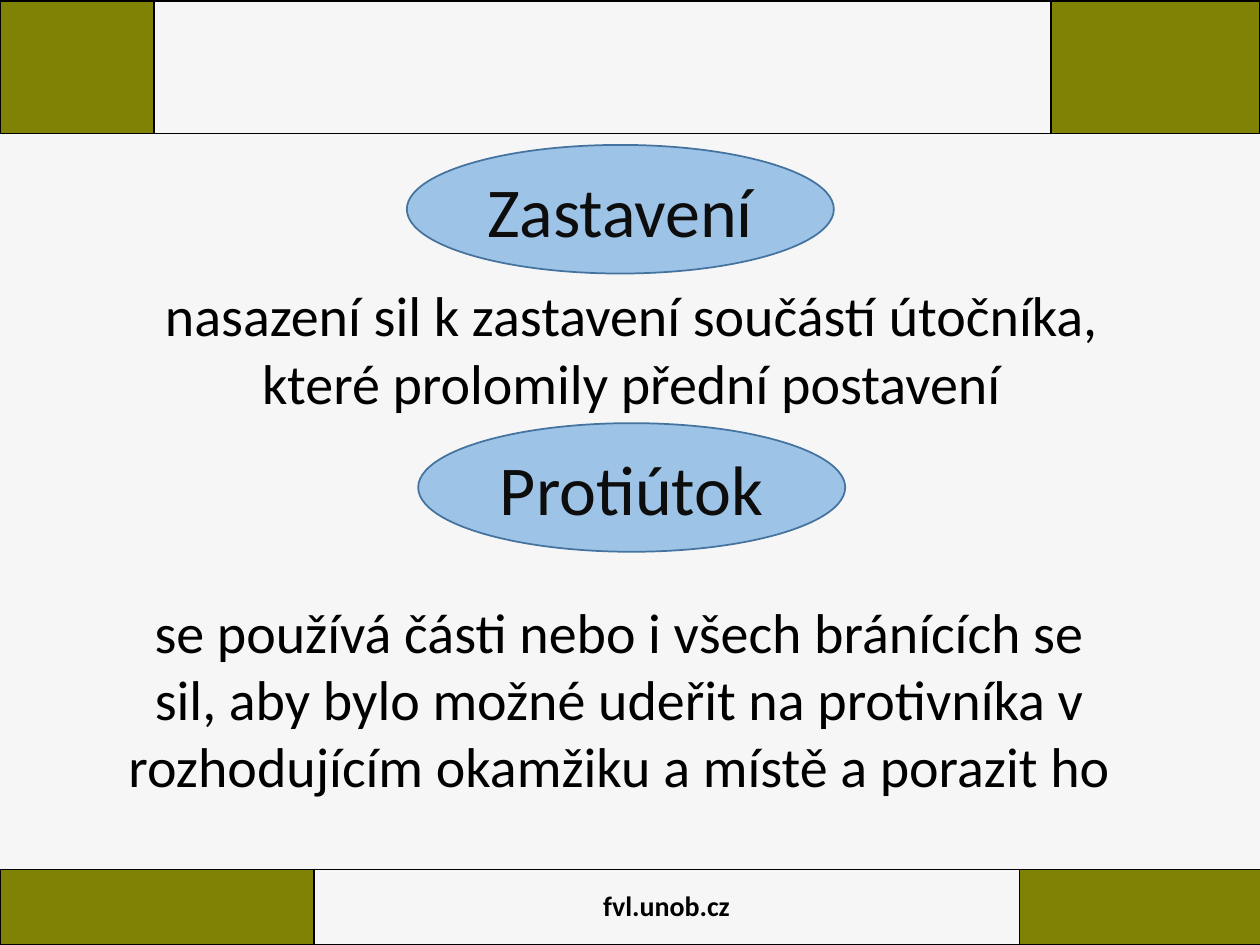
import pptx
import pptx.dml.color
import pptx.enum.shapes
import pptx.enum.text
import pptx.oxml.ns
import pptx.util
from lxml import etree

Pt = pptx.util.Pt
CENTER = pptx.enum.text.PP_ALIGN.CENTER
MIDDLE = pptx.enum.text.MSO_ANCHOR.MIDDLE
OLIVE, BLACK = "808206", "000000"


def color(value):
    return pptx.dml.color.RGBColor.from_string(value)


def write(tf, text, size=32, fill=BLACK, bold=False, font="Calibri"):
    """Fill a text frame with centred paragraphs, one per line of text."""
    tf.word_wrap = True
    for i, line in enumerate(text.split("\n")):
        p = tf.paragraphs[0] if i == 0 else tf.add_paragraph()
        p.alignment = CENTER
        r = p.add_run()
        r.text = line
        r.font.name, r.font.size, r.font.bold = font, Pt(size), bold
        r.font.color.rgb = color(fill)


def border(cell, width=1, fill=BLACK):
    tc_pr = cell._tc.get_or_add_tcPr()
    qn = pptx.oxml.ns.qn
    for side in ("lnL", "lnR", "lnT", "lnB"):
        ln = etree.SubElement(tc_pr, qn(f"a:{side}"), w=str(Pt(width)))
        solid = etree.SubElement(ln, qn("a:solidFill"))
        etree.SubElement(solid, qn("a:srgbClr"), val=fill)


class Deck:
    def __init__(self, width, height, background):
        self.prs = pptx.Presentation()
        self.prs.slide_width, self.prs.slide_height = Pt(width), Pt(height)
        self.s = self.prs.slides.add_slide(self.prs.slide_layouts[6])
        self.s.background.fill.solid()
        self.s.background.fill.fore_color.rgb = color(background)

    def band(self, top, height, widths, text=""):
        """Add a one-row table with olive outer cells and a clear middle."""
        frame = self.s.shapes.add_table(
            1, len(widths), 0, Pt(top), Pt(sum(widths)), Pt(height))
        table = frame.table
        table.first_row = table.horz_banding = False
        table.rows[0].height = Pt(height)
        for i, width in enumerate(widths):
            table.columns[i].width = Pt(width)
            cell = table.cell(0, i)
            cell.vertical_anchor = MIDDLE
            border(cell)
            if i == 1:
                cell.fill.background()
                if text:
                    write(cell.text_frame, text, size=16, bold=True)
            else:
                cell.fill.solid()
                cell.fill.fore_color.rgb = color(OLIVE)

    def ellipse(self, left, top, text, width=244, height=73.5):
        sp = self.s.shapes.add_shape(
            pptx.enum.shapes.MSO_SHAPE.OVAL,
            Pt(left), Pt(top), Pt(width), Pt(height))
        sp.shadow.inherit = False
        sp.fill.solid()
        sp.fill.fore_color.rgb = color("9DC3E6")
        sp.line.color.rgb = color("43739E")
        sp.line.width = Pt(1)
        sp.text_frame.vertical_anchor = MIDDLE
        write(sp.text_frame, text, size=40, fill="0D0D0D")

    def text(self, left, top, width, height, text):
        sp = self.s.shapes.add_textbox(
            Pt(left), Pt(top), Pt(width), Pt(height))
        write(sp.text_frame, text)


def main():
    deck = Deck(720, 540, "F6F6F6")
    deck.band(496.8, 43.2, (179.3, 403.2, 138.2), "fvl.unob.cz")
    deck.band(0.7, 75.6, (87.9, 512.6, 119.5))
    deck.ellipse(232.5, 82.8, "Zastavení")
    deck.text(60.5, 157, 601, 85,
              "nasazení sil k zastavení součástí útočníka, "
              "které prolomily přední postavení")
    deck.ellipse(239, 241.8, "Protiútok")
    deck.text(19.5, 337.7, 669, 124,
              "se používá části nebo i všech bránících se\n"
              "sil, aby bylo možné udeřit na protivníka v "
              "rozhodujícím okamžiku a místě a porazit ho")
    deck.prs.save("out.pptx")


if __name__ == "__main__":
    main()
